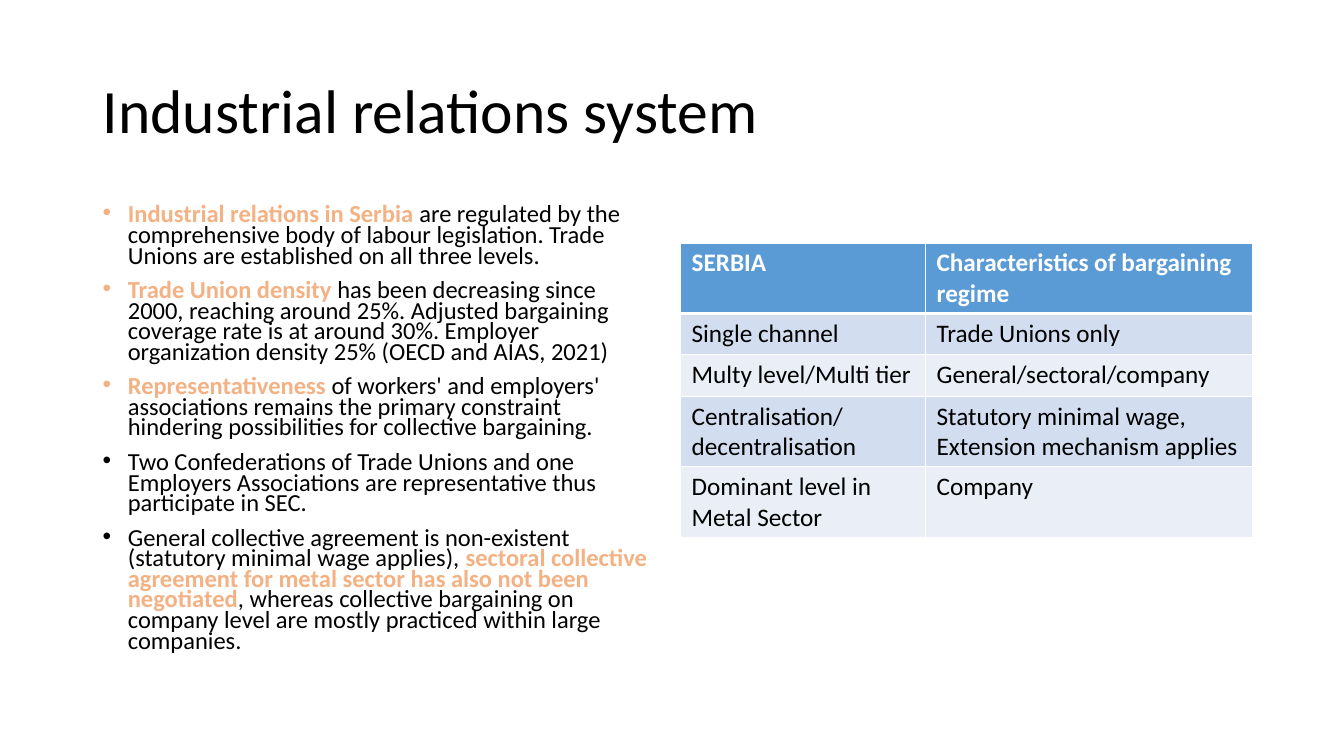
from lxml.etree import SubElement
from pptx import Presentation
from pptx.dml.color import RGBColor
from pptx.enum.text import MSO_ANCHOR as Anchor
from pptx.oxml.ns import qn
from pptx.util import Inches, Pt

FONT = "Calibri"
BLACK, WHITE, ORANGE = "000000", "FFFFFF", "F4B183"
HEADER_FILL, BAND_FILLS = "5B9BD5", ("D2DEEF", "EAEFF7")

TITLE = "Industrial relations system"
BULLETS = [
    [("Industrial relations in Serbia ", True),
     ("are regulated by the comprehensive body of labour legislation. "
      "Trade Unions are established on all three levels.", False)],
    [("Trade Union density ", True),
     ("has been decreasing since 2000, reaching around 25%. Adjusted bargaining coverage rate "
      "is at around 30%. Employer organization density 25% (OECD and AIAS, 2021)", False)],
    [("Representativeness", True),
     (" of workers' and employers' associations remains the primary constraint "
      "hindering possibilities for collective bargaining.", False)],
    [("Two Confederations of Trade Unions and one Employers Associations "
      "are representative thus participate in SEC.", False)],
    [("General collective agreement is non-existent (statutory minimal wage applies), ", False),
     ("sectoral collective agreement for metal sector has also not been negotiated", True),
     (", whereas collective bargaining on company level are mostly practiced "
      "within large companies.", False)],
]
TABLE_ROWS = [
    ("SERBIA", "Characteristics of bargaining regime"),
    ("Single channel", "Trade Unions only"),
    ("Multy level/Multi tier", "General/sectoral/company"),
    ("Centralisation/decentralisation", "Statutory minimal wage, Extension mechanism applies"),
    ("Dominant level in Metal Sector", "Company"),
]
COLUMN_WIDTHS = (2.43, 3.24)
ROW_HEIGHT = 0.41


def color(hex_value):
    return RGBColor.from_string(hex_value)


def format_run(run, size, hex_value, bold=False):
    run.font.name = FONT
    run.font.size = Pt(size)
    run.font.bold = bold
    run.font.color.rgb = color(hex_value)


def add_text_frame(slide, left, top, width, height):
    box = slide.shapes.add_textbox(Inches(left), Inches(top), Inches(width), Inches(height))
    box.text_frame.word_wrap = True
    return box.text_frame


def add_bullet(paragraph):
    properties = paragraph._p.get_or_add_pPr()
    properties.set("marL", str(Inches(0.25)))
    properties.set("indent", str(Inches(-0.25)))
    SubElement(properties, qn("a:buFont"), typeface="Arial")
    SubElement(properties, qn("a:buChar"), char="•")


def add_borders(cell, bottom_width):
    properties = cell._tc.get_or_add_tcPr()
    for side, width in (("L", 1), ("R", 1), ("T", 1), ("B", bottom_width)):
        line = SubElement(properties, qn(f"a:ln{side}"), w=str(Pt(width)))
        fill = SubElement(line, qn("a:solidFill"))
        SubElement(fill, qn("a:srgbClr"), val=WHITE)


def add_title(slide):
    frame = add_text_frame(slide, 0.92, 0.4, 11.5, 1.45)
    frame.vertical_anchor = Anchor.MIDDLE
    paragraph = frame.paragraphs[0]
    paragraph.text = TITLE
    paragraph.line_spacing = 0.9
    format_run(paragraph.runs[0], 44, BLACK)


def add_bullets(slide):
    frame = add_text_frame(slide, 0.92, 2, 5.67, 4.76)
    for index, parts in enumerate(BULLETS):
        paragraph = frame.add_paragraph() if index else frame.paragraphs[0]
        paragraph.line_spacing = 0.7
        paragraph.space_before = Pt(10)
        add_bullet(paragraph)
        for text, highlighted in parts:
            run = paragraph.add_run()
            run.text = text
            format_run(run, 17.5, ORANGE if highlighted else BLACK, highlighted)


def add_bargaining_table(slide):
    table = slide.shapes.add_table(
        len(TABLE_ROWS), len(COLUMN_WIDTHS), Inches(6.75), Inches(2.41),
        Inches(sum(COLUMN_WIDTHS)), Inches(ROW_HEIGHT * len(TABLE_ROWS))).table
    for column, width in zip(table.columns, COLUMN_WIDTHS):
        column.width = Inches(width)
    for row_index, texts in enumerate(TABLE_ROWS):
        header = row_index == 0
        table.rows[row_index].height = Inches(ROW_HEIGHT)
        for column_index, text in enumerate(texts):
            cell = table.cell(row_index, column_index)
            cell.text_frame.text = text
            cell.margin_left = cell.margin_right = Inches(0.11)
            cell.margin_top = cell.margin_bottom = Inches(0.05)
            add_borders(cell, 3 if header else 1)
            cell.fill.solid()
            cell.fill.fore_color.rgb = color(HEADER_FILL if header else BAND_FILLS[(row_index - 1) % 2])
            format_run(cell.text_frame.paragraphs[0].runs[0], 18, WHITE if header else BLACK, header)


def main():
    presentation = Presentation()
    presentation.slide_width = Inches(13.33)
    presentation.slide_height = Inches(7.5)
    slide = presentation.slides.add_slide(presentation.slide_layouts[6])
    add_title(slide)
    add_bullets(slide)
    add_bargaining_table(slide)
    presentation.save("out.pptx")


if __name__ == "__main__":
    main()
